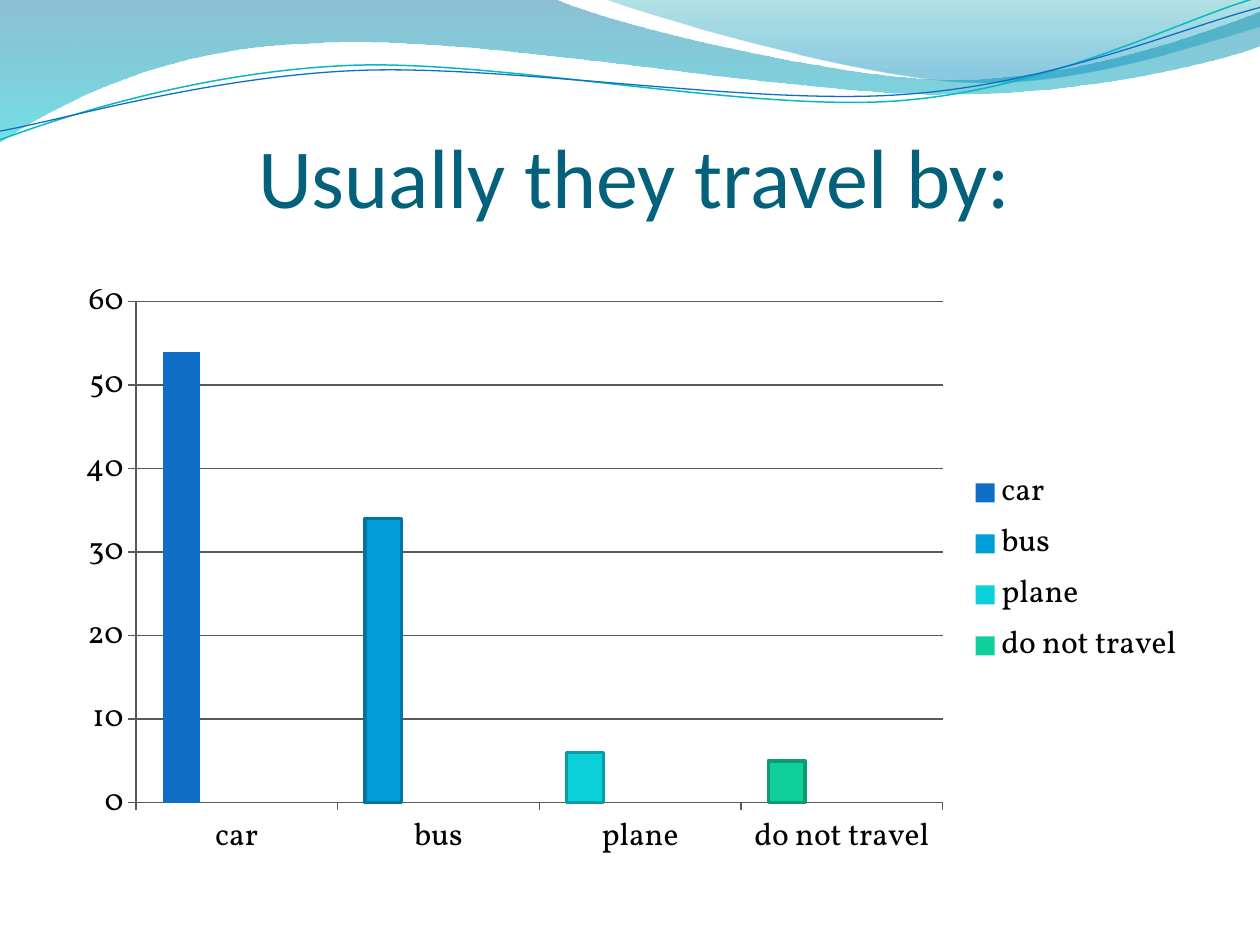
from dataclasses import dataclass
from math import cos, radians, sin
from typing import Optional

from lxml.etree import SubElement
from pptx import Presentation
from pptx.chart.data import CategoryChartData
from pptx.dml.color import RGBColor
from pptx.enum.chart import XL_CHART_TYPE as ChartType
from pptx.enum.chart import XL_LEGEND_POSITION as LegendPos
from pptx.enum.chart import XL_TICK_MARK as Tick
from pptx.enum.text import MSO_AUTO_SIZE as AutoSize
from pptx.oxml.ns import qn
from pptx.util import Pt

AXIS_GRAY = "595959"


@dataclass
class Stop:
    position: float
    color: str
    opacity: int


@dataclass
class Wave:
    start: tuple
    segments: list
    stops: Optional[list] = None
    line: Optional[tuple] = None
    center: tuple = (0, 0)
    tilt: float = 0


@dataclass
class Transport:
    name: str
    value: int
    color: str
    outline: Optional[str] = None


WAVES = [
    Wave((0, 0), [
        (316.8, -0.7),
        (342.7, 12.2, 478.1, 45.4, 545.8, 45.4),
        (614.2, 45.4, 689.8, 18.7, 720, 6.5),
        (720.7, 25.9),
        (707.8, 31.7, 626.4, 54.7, 537.1, 54),
        (447.8, 54, 275, 20.2, 185, 24.5),
        (92.9, 25.9, 33.1, 59.8, -0.7, 81.4),
        (0, 0),
    ], stops=[Stop(0, "0074A1", 45), Stop(1, "00C6CF", 55)]),
    Wave((344.9, -0.7), [
        (366.5, 7.9, 491, 44.6, 553.7, 46.8),
        (616.3, 49.7, 691.9, 23, 720, 15.1),
        (720, 0),
        (344.9, -0.7),
    ], stops=[Stop(0, "00A1A9", 30), Stop(0.8, "008BBF", 45)]),
    Wave((0, 79.9), [
        (34.6, 67, 113.8, 41, 199.4, 37.4),
        (284.4, 33.8, 427, 64.1, 513.4, 57.6),
        (599.8, 51.1, 675.4, 10.8, 718.6, -1.4),
    ], line=("0AB8BF", 0.85), center=(359.3, 41.4), tilt=2.7),
    Wave((0, 74.9), [
        (33.8, 69.1, 118.1, 43.9, 203.8, 40.3),
        (290.2, 36.7, 429.8, 60.5, 516.2, 54),
        (601.9, 48.2, 677.5, 15.1, 720, 4.3),
    ], line=("0F6FC6", 0.75), center=(359.6, 42.5), tilt=2.7),
]

TRANSPORTS = [
    Transport("car", 54, "0F6FC6"),
    Transport("bus", 34, "009DD9", "0075A2"),
    Transport("plane", 6, "0BD0D9", "089CA3"),
    Transport("do not travel", 5, "10CF9B", "0C9B74"),
]


def rgb(color: str) -> RGBColor:
    return RGBColor.from_string(color)


def set_attrs(obj, values: dict) -> None:
    for name, value in values.items():
        setattr(obj, name, value)


def paint(fill, color: str) -> None:
    fill.solid()
    fill.fore_color.rgb = rgb(color)


def draw_line(line, color: str, width: float) -> None:
    paint(line.fill, color)
    line.width = Pt(width)


def level(wave: Wave, x: float, y: float) -> tuple:
    cx, cy = wave.center
    dx, dy, a = x - cx, y - cy, radians(wave.tilt)
    return (Pt(cx + dx * cos(a) - dy * sin(a)), Pt(cy + dx * sin(a) + dy * cos(a)))


def bend(sp, segments: list) -> None:
    lines = iter(list(sp._element.spPr.iter(qn("a:lnTo"))))
    for seg in segments:
        first = next(lines)
        if len(seg) == 2:
            continue
        curve = first.getparent().makeelement(qn("a:cubicBezTo"), {})
        first.addprevious(curve)
        for ln in (first, next(lines), next(lines)):
            curve.append(ln[0])
            ln.getparent().remove(ln)


def add_wave(s, wave: Wave) -> None:
    vertices = [level(wave, *seg[i:i + 2])
                for seg in wave.segments for i in range(0, len(seg), 2)]
    builder = s.shapes.build_freeform(*level(wave, *wave.start))
    builder.add_line_segments(vertices, close=wave.stops is not None)
    sp = builder.convert_to_shape()
    bend(sp, wave.segments)
    sp.shadow.inherit = False
    sp.rotation = -wave.tilt
    if wave.line:
        sp.fill.background()
        draw_line(sp.line, *wave.line)
        return
    sp.line.fill.background()
    sp.fill.gradient()
    sp.fill.gradient_angle = 270
    for target, stop in zip(sp.fill.gradient_stops, wave.stops):
        target.color.rgb = rgb(stop.color)
        target.position = stop.position
    for clr, stop in zip(sp._element.spPr.iter(qn("a:srgbClr")), wave.stops):
        SubElement(clr, qn("a:alpha")).set("val", str(stop.opacity * 1000))


def add_travel_chart(s, transports: list) -> None:
    data = CategoryChartData()
    data.categories = [t.name for t in transports]
    empty = [None] * len(transports)
    for i, t in enumerate(transports):
        data.add_series(t.name, empty if i else [x.value for x in transports])
    chart = s.shapes.add_chart(ChartType.COLUMN_CLUSTERED, Pt(36), Pt(152.6),
                               Pt(648), Pt(345.6), data).chart
    set_attrs(chart, {"has_title": False, "has_legend": True})
    set_attrs(chart.font, {"size": Pt(18), "name": "Vollkorn"})
    chart.font.color.rgb = rgb("000000")
    set_attrs(chart.legend, {"position": LegendPos.RIGHT, "include_in_layout": False})
    plot = chart.plots[0]
    set_attrs(plot, {"vary_by_categories": False, "gap_width": 150, "overlap": 0})
    for series, t in zip(plot.series, transports):
        paint(series.format.fill, t.color)
    for i, t in enumerate(transports):
        if t.outline:
            fmt = plot.series[0].points[i].format
            paint(fmt.fill, t.color)
            draw_line(fmt.line, t.outline, 2)
    set_attrs(chart.value_axis, {"minimum_scale": 0, "maximum_scale": 60,
                                 "major_unit": 10, "has_major_gridlines": True})
    draw_line(chart.value_axis.major_gridlines.format.line, AXIS_GRAY, 0.75)
    for axis in (chart.category_axis, chart.value_axis):
        set_attrs(axis, {"major_tick_mark": Tick.OUTSIDE, "minor_tick_mark": Tick.NONE})
        draw_line(axis.format.line, AXIS_GRAY, 0.75)


def add_title(s, text: str) -> None:
    tf = s.shapes.add_textbox(Pt(140.4), Pt(67.7), Pt(449.3), Pt(65.5)).text_frame
    set_attrs(tf, {"word_wrap": False, "auto_size": AutoSize.SHAPE_TO_FIT_TEXT})
    r = tf.paragraphs[0].add_run()
    r.text = text
    set_attrs(r.font, {"size": Pt(48), "name": "Calibri"})
    r.font.color.rgb = rgb("04617B")


def main() -> None:
    prs = Presentation()
    set_attrs(prs, {"slide_width": Pt(720), "slide_height": Pt(540)})
    s = prs.slides.add_slide(prs.slide_layouts[6])
    for wave in WAVES:
        add_wave(s, wave)
    add_travel_chart(s, TRANSPORTS)
    add_title(s, "Usually they travel by:")
    prs.save("out.pptx")


if __name__ == "__main__":
    main()
